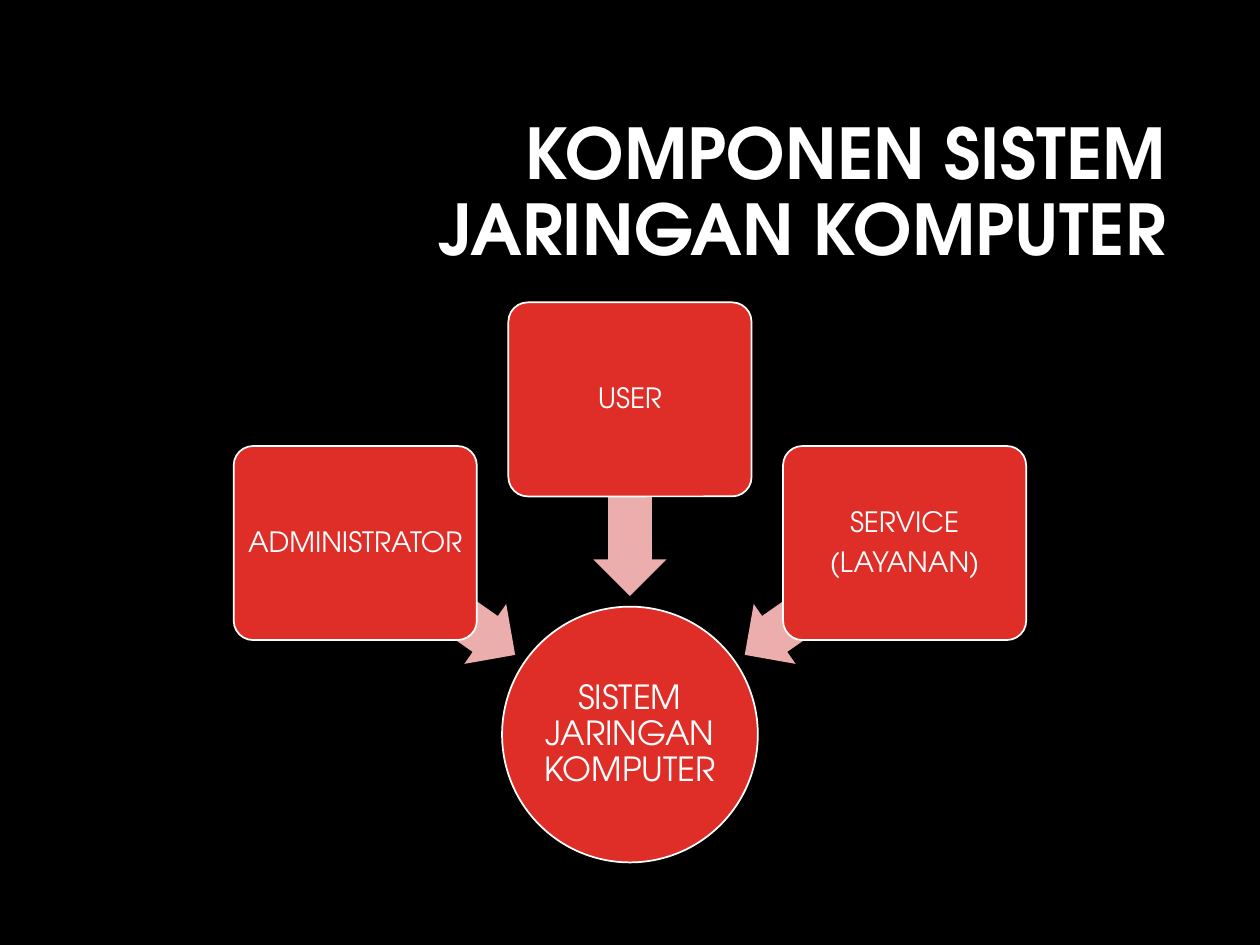
"""Build a slide showing three components converging on a computer network system."""
from dataclasses import dataclass

from pptx import Presentation
from pptx import util as u
from pptx.dml.color import RGBColor
from pptx.enum import shapes, text


@dataclass(frozen=True)
class Theme:
    font: str = "TeX Gyre Adventor"
    background: RGBColor = RGBColor(0x00, 0x00, 0x00)
    foreground: RGBColor = RGBColor(0xFF, 0xFF, 0xFF)
    node: RGBColor = RGBColor(0xDF, 0x2E, 0x28)
    arrow: RGBColor = RGBColor(0xEC, 0xAD, 0xAD)
    title_size: int = 40
    hub_size: int = 19
    box_size: int = 16


theme = Theme()
presentation = Presentation()
presentation.slide_width = u.Inches(10)
presentation.slide_height = u.Inches(7.5)
slide = presentation.slides.add_slide(presentation.slide_layouts[6])
slide.background.fill.solid()
slide.background.fill.fore_color.rgb = theme.background


def add_centred(kind, center_x, center_y, width, height, color):
    shape = slide.shapes.add_shape(
        kind, u.Inches(center_x - width / 2), u.Inches(center_y - height / 2),
        u.Inches(width), u.Inches(height))
    shape.shadow.inherit = False
    shape.fill.solid()
    shape.fill.fore_color.rgb = color
    shape.line.fill.background()
    return shape


def write(shape, lines, size, inset, align=text.PP_ALIGN.CENTER, bold=False, after=0.35):
    frame = shape.text_frame
    frame.word_wrap = True
    frame.vertical_anchor = text.MSO_ANCHOR.MIDDLE
    frame.margin_left = frame.margin_right = u.Inches(inset[0])
    frame.margin_top = frame.margin_bottom = u.Inches(inset[1])
    for index, line in enumerate(lines):
        paragraph = frame.add_paragraph() if index else frame.paragraphs[0]
        paragraph.alignment = align
        paragraph.line_spacing = 0.9
        paragraph.space_after = u.Pt(size * after)
        run = paragraph.add_run()
        run.text = line
        run.font.name = theme.font
        run.font.size = u.Pt(size)
        run.font.bold = bold
        run.font.color.rgb = theme.foreground


title = slide.shapes.add_textbox(
    u.Inches(2.38), u.Inches(0.84), u.Inches(6.97), u.Inches(1.41))
write(title, ["KOMPONEN SISTEM JARINGAN KOMPUTER"], theme.title_size,
      (0.1, 0.05), text.PP_ALIGN.RIGHT, bold=True, after=0)

middle = 5
column_gap = 2.18
arrow_gap = 1.55
hub = add_centred(shapes.MSO_SHAPE.OVAL, middle, 5.83, 2.03, 2.03, theme.node)
write(hub, ["SISTEM JARINGAN KOMPUTER"], theme.hub_size, (0.01, 0.01))
nodes = [hub]

components = [
    (-1, 4.31, 4.75, 215, ["ADMINISTRATOR"]),
    (0, 3.17, 3.95, 270, ["USER"]),
    (1, 4.31, 4.75, 325, ["SERVICE", "(LAYANAN)"]),
]
for column, box_y, arrow_y, rotation, lines in components:
    arrow = add_centred(shapes.MSO_SHAPE.LEFT_ARROW, middle + column * arrow_gap,
                        arrow_y, 1.56, 0.58, theme.arrow)
    arrow.adjustments[0] = 0.6
    arrow.adjustments[1] = 0.5
    arrow.rotation = rotation
    box = add_centred(shapes.MSO_SHAPE.ROUNDED_RECTANGLE, middle + column * column_gap,
                      box_y, 1.93, 1.54, theme.node)
    box.adjustments[0] = 0.1
    write(box, lines, theme.box_size, (0.03, 0.03))
    nodes.append(box)

for node in nodes:
    node.line.color.rgb = theme.foreground
    node.line.width = u.Pt(1)

presentation.save("out.pptx")
